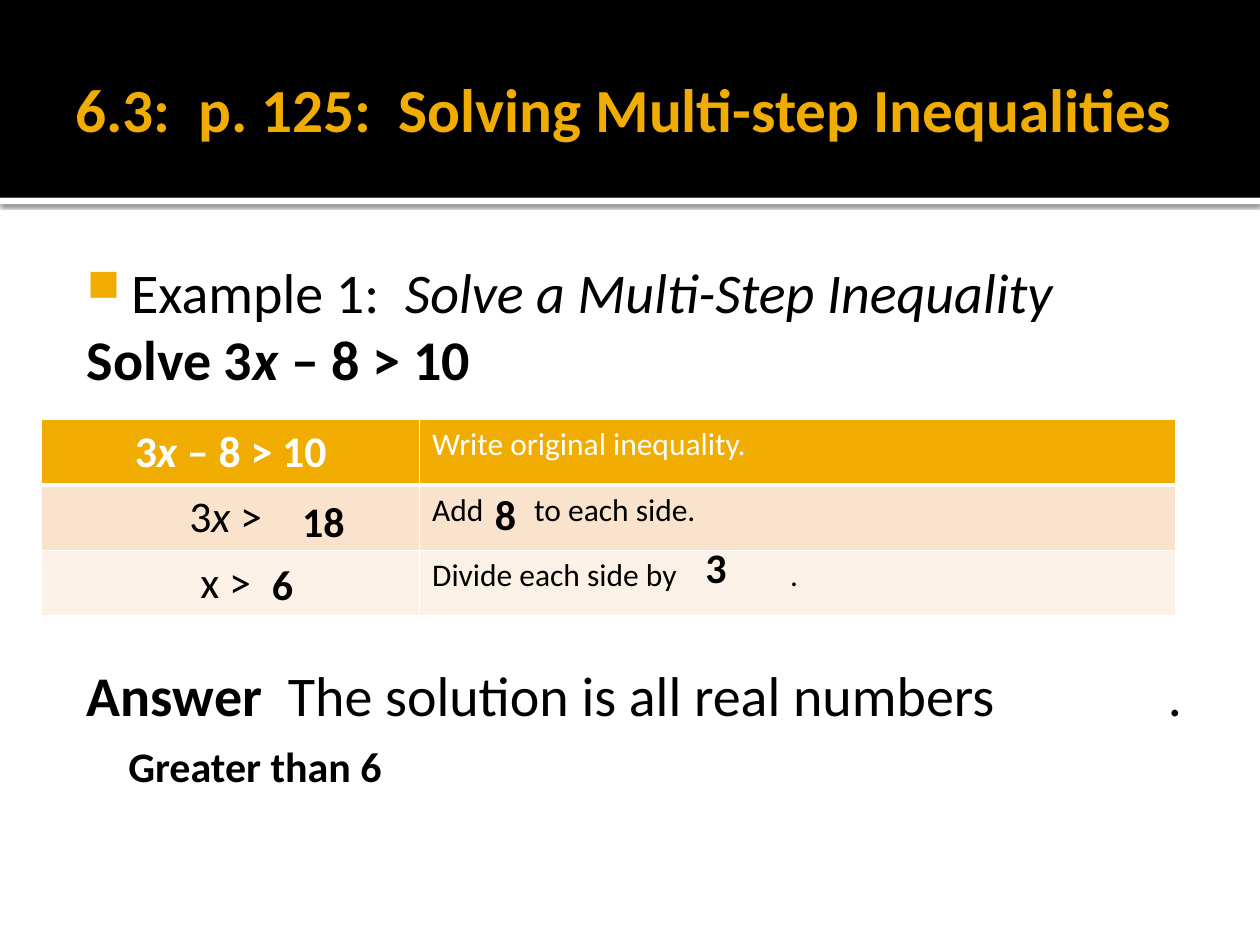
from dataclasses import dataclass

from lxml import etree
from pptx import Presentation
from pptx.dml.color import RGBColor
from pptx.enum import shapes, text
from pptx.oxml.ns import qn
from pptx.util import Inches, Pt

FONT = "Calibri"
COLORS = {
    "black": "000000",
    "white": "FFFFFF",
    "gold": "F0AD00",
    "peach": "F9E3CC",
    "cream": "FCF1E7",
}


@dataclass
class Run:
    text: str
    bold: bool = False
    italic: bool = False


@dataclass
class Answer:
    text: str
    left: float
    top: float
    width: float = 0.92


@dataclass
class Step:
    work: list[Run]
    reason: str
    fill: str
    color: str = "black"
    tab: float | None = None
    border: float = 1  # width of the bottom border


def rgb(name: str) -> RGBColor:
    return RGBColor.from_string(COLORS[name])


def write(p, runs: list[Run], size: float, color: str = "black") -> None:
    p.font.name, p.font.size = FONT, Pt(size)
    p.font.color.rgb = rgb(color)
    for run in runs:
        r = p.add_run()
        r.text = run.text
        r.font.bold, r.font.italic = run.bold, run.italic


def add_tab_stop(p, position: float) -> None:
    pPr = p._p.get_or_add_pPr()
    tabs = etree.Element(qn("a:tabLst"))
    etree.SubElement(tabs, qn("a:tab"), pos=str(Inches(position)), algn="l")
    pPr.insert_element_before(tabs, "a:defRPr", "a:extLst")


def add_bullet(p, indent: float) -> None:
    pPr = p._p.get_or_add_pPr()
    pPr.set("marL", str(Inches(indent)))
    pPr.set("indent", str(-Inches(indent)))
    color = etree.Element(qn("a:buClr"))
    etree.SubElement(color, qn("a:srgbClr"), val=COLORS["gold"])
    size = etree.Element(qn("a:buSzPct"), val="80000")
    char = etree.Element(qn("a:buChar"), char="■")
    for el in (color, size, char):
        pPr.insert_element_before(el, "a:tabLst", "a:defRPr", "a:extLst")


def add_text_box(s, left: float, top: float, width: float, height: float):
    tf = s.shapes.add_textbox(*map(Inches, (left, top, width, height))).text_frame
    tf.word_wrap = True
    return tf


def add_band(s, top: float, height: float, color: str):
    sp = s.shapes.add_shape(shapes.MSO_SHAPE.RECTANGLE, 0, Inches(top),
                            Inches(10), Inches(height))
    sp.shadow.inherit = False
    sp.fill.solid()
    sp.fill.fore_color.rgb = rgb(color)
    sp.line.fill.background()
    return sp


def add_shadow(sp) -> None:
    effects = sp._element.spPr.find(qn("a:effectLst"))
    shadow = etree.SubElement(effects, qn("a:outerShdw"), blurRad=str(Pt(2.5)),
                              dist=str(Pt(0.8)), dir="5400000", rotWithShape="0")
    color = etree.SubElement(shadow, qn("a:srgbClr"), val=COLORS["black"])
    etree.SubElement(color, qn("a:alpha"), val="60000")


def set_borders(cell, bottom: float) -> None:
    tcPr = cell._tc.get_or_add_tcPr()
    widths = {"a:lnL": 1, "a:lnR": 1, "a:lnT": 1, "a:lnB": bottom}
    for i, (tag, width) in enumerate(widths.items()):
        ln = etree.Element(qn(tag), w=str(Pt(width)))
        fill = etree.SubElement(ln, qn("a:solidFill"))
        etree.SubElement(fill, qn("a:srgbClr"), val=COLORS["white"])
        tcPr.insert(i, ln)


def add_steps(s, steps: list[Step]) -> None:
    row_height = Inches(0.52)
    table = s.shapes.add_table(len(steps), 2, Inches(0.33), Inches(3.33),
                               Inches(9), row_height * len(steps)).table
    table.columns[0].width, table.columns[1].width = Inches(3), Inches(6)
    for row, step in enumerate(steps):
        table.rows[row].height = row_height
        work, reason = table.cell(row, 0), table.cell(row, 1)
        for cell in (work, reason):
            cell.fill.solid()
            cell.fill.fore_color.rgb = rgb(step.fill)
            set_borders(cell, step.border)
        p = work.text_frame.paragraphs[0]
        p.alignment = text.PP_ALIGN.CENTER
        write(p, step.work, 25, step.color)
        p = reason.text_frame.paragraphs[0]
        write(p, [Run(step.reason)], 18, step.color)
        if step.tab:
            add_tab_stop(p, step.tab)


def main() -> None:
    prs = Presentation()
    prs.slide_width, prs.slide_height = Inches(10), Inches(7.5)
    s = prs.slides.add_slide(prs.slide_layouts[6])

    # Header bands
    add_shadow(add_band(s, 1.57, 0.05, "white"))
    add_band(s, 0, 1.57, "black")

    # Title
    tf = add_text_box(s, 0.5, 0.17, 9.17, 1.37)
    tf.vertical_anchor = text.MSO_ANCHOR.MIDDLE
    tf.margin_right = Inches(0.05)
    write(tf.paragraphs[0],
          [Run("6.3:  p. 125:  Solving Multi-step Inequalities", bold=True)], 35, "gold")

    # Problem and answer sentence, with room between them for the table
    tf = add_text_box(s, 0.5, 1.94, 9, 5.06)
    tf.margin_left, tf.margin_top = Inches(0.19), Inches(0.1)
    example = tf.paragraphs[0]
    write(example, [Run("Example 1:  "),
                    Run("Solve a Multi-Step Inequality", italic=True)], 32)
    add_bullet(example, 0.35)
    inequality = [Run("x", True, True), Run(" – 8 > 10", True)]
    write(tf.add_paragraph(), [Run("Solve 3", True), *inequality], 32)
    solution = tf.add_paragraph()
    solution.space_before = Pt(154)
    write(solution, [Run("Answer", True),
                     Run("  The solution is all real numbers \t.")], 32)
    add_tab_stop(solution, 8.58)

    # Solution steps
    add_steps(s, [
        Step([Run("3", True), *inequality], "Write original inequality.",
             "gold", "white", border=3),
        Step([Run("3"), Run("x", italic=True), Run(" > ")],
             "Add\tto each side.", "peach", tab=0.81),
        Step([Run("x > ")], "Divide each side by\t.", "cream", tab=2.84),
    ])

    # Filled-in answers
    for a in (Answer("8", 3.83, 3.83), Answer("18", 2.3, 3.88),
              Answer("3", 5.5, 4.25), Answer("6", 2.06, 4.38),
              Answer("Greater than 6", 0.92, 5.83, 5.5)):
        tf = add_text_box(s, a.left, a.top, a.width, 0.5)
        write(tf.paragraphs[0], [Run(a.text, bold=True)], 24)

    prs.save("out.pptx")


if __name__ == "__main__":
    main()
